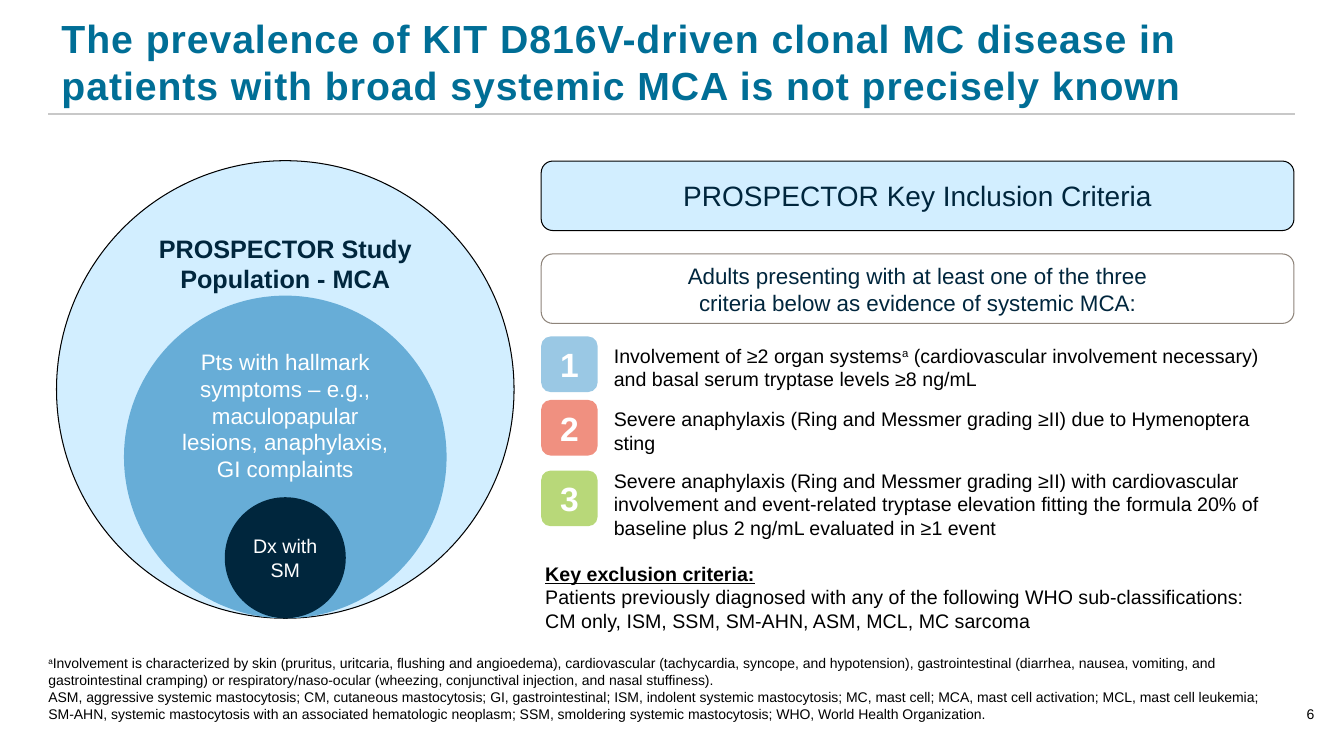
"""Build the slide on MCA study population and PROSPECTOR inclusion criteria."""
from lxml.etree import SubElement
from pptx import Presentation
from pptx.dml.color import RGBColor
from pptx.enum.shapes import MSO_CONNECTOR, MSO_SHAPE as Preset
from pptx.enum.text import MSO_ANCHOR as Anchor, PP_ALIGN as Align
from pptx.oxml.ns import qn
from pptx.util import Cm, Pt

COLORS = {
    "title": "006E96", "navy": "00263D", "pale": "D2EEFF", "sky": "67ADD7",
    "white": "FFFFFF", "black": "000000", "taupe": "8E847A", "rule": "C8C8C8",
    "one": "9AC8E4", "two": "F09080", "three": "B8D879",
}


def write(shape, paragraphs, size, color, bold=False, align=Align.LEFT,
          anchor=Anchor.TOP, inset=(0.25, 0.13)):
    """Fill a shape with paragraphs; text between carets is superscript."""
    frame = shape.text_frame
    frame.word_wrap = True
    frame.vertical_anchor = anchor
    frame.margin_left = frame.margin_right = Cm(inset[0])
    frame.margin_top = frame.margin_bottom = Cm(inset[1])
    for index, text in enumerate(paragraphs):
        paragraph = frame.add_paragraph() if index else frame.paragraphs[0]
        paragraph.alignment = align
        paragraph.font.name = "Arial"
        paragraph.font.size = Pt(size)
        paragraph.font.bold = bold
        paragraph.font.color.rgb = RGBColor.from_string(COLORS[color])
        if "^" not in text:
            paragraph.text = text
            continue
        for position, part in enumerate(text.split("^")):
            if part:
                run = paragraph.add_run()
                run.text = part
                if position % 2:
                    run._r.get_or_add_rPr().set("baseline", "30000")
    return frame.paragraphs


def draw(preset, left, top, width, height, fill=None, line=None):
    """Add a preset shape without shadow."""
    shape = slide.shapes.add_shape(preset, Cm(left), Cm(top), Cm(width), Cm(height))
    shape.shadow.inherit = False
    if fill:
        shape.fill.solid()
        shape.fill.fore_color.rgb = RGBColor.from_string(COLORS[fill])
    else:
        shape.fill.background()
    if line:
        shape.line.color.rgb = RGBColor.from_string(COLORS[line])
        shape.line.width = Pt(0.75)
    else:
        shape.line.fill.background()
    return shape


deck = Presentation()
deck.slide_width, deck.slide_height = Cm(33.87), Cm(19.05)
slide = deck.slides.add_slide(deck.slide_layouts[6])
textbox = slide.shapes.add_textbox

title_rule = slide.shapes.add_connector(
    MSO_CONNECTOR.STRAIGHT, Cm(1.22), Cm(2.87), Cm(32.64), Cm(2.87))
title_rule.line.color.rgb = RGBColor.from_string(COLORS["rule"])
title_rule.line.width = Pt(1)
SubElement(title_rule._element.spPr, qn("a:effectLst"))

title = textbox(Cm(1.22), Cm(0.84), Cm(31.4), Cm(2.08))
headline = write(
    title,
    ["The prevalence of KIT D816V-driven clonal MC disease in patients with "
     "broad systemic MCA is not precisely known"],
    28, "title", bold=True, anchor=Anchor.BOTTOM, inset=(0.33, 0.18))
headline[0].runs[0]._r.get_or_add_rPr().set("spc", "70")

page_number = textbox(Cm(32.39), Cm(17.17), Cm(1.27), Cm(1.02))
write(page_number, ["6"], 10, "black", align=Align.CENTER,
      anchor=Anchor.BOTTOM, inset=(0, 0))

CIRCLE_CENTER, CIRCLE_BOTTOM = 7.19, 15.58
populations = [
    (11.53, "pale", "black", "PROSPECTOR Study Population - MCA", 18, "navy", True, Anchor.TOP),
    (8.13, "sky", None,
     "Pts with hallmark symptoms – e.g., maculopapular lesions, anaphylaxis, GI complaints",
     16, "white", False, Anchor.TOP),
    (3.05, "navy", None, "Dx with SM", 14, "white", False, Anchor.MIDDLE),
]
for diameter, fill, line, label, size, color, bold, anchor in populations:
    circle = draw(Preset.OVAL, CIRCLE_CENTER - diameter / 2, CIRCLE_BOTTOM - diameter,
                  diameter, diameter, fill, line)
    write(circle, [label], size, color, bold, Align.CENTER, anchor, inset=(0.1, 0.13))

BANNER_LEFT = 13.64
banners = [
    (4.06, "pale", "black", "PROSPECTOR Key Inclusion Criteria", 20),
    (6.4, None, "taupe",
     "Adults presenting with at least one of the three\vcriteria below as evidence of systemic MCA:", 16),
]
for top, fill, line, label, size in banners:
    banner = draw(Preset.ROUNDED_RECTANGLE, BANNER_LEFT, top, 18.97, 1.75, fill, line)
    write(banner, [label], size, "navy", align=Align.CENTER, anchor=Anchor.MIDDLE)

criteria = [
    ("one", 8.48, 8.53,
     "Involvement of ≥2 organ systems^a^ (cardiovascular involvement necessary) "
     "and basal serum tryptase levels ≥8 ng/mL"),
    ("two", 10.08, 10.13,
     "Severe anaphylaxis (Ring and Messmer grading ≥II) due to Hymenoptera sting"),
    ("three", 11.86, 11.68,
     "Severe anaphylaxis (Ring and Messmer grading ≥II) with cardiovascular "
     "involvement and event-related tryptase elevation fitting the formula 20% of "
     "baseline plus 2 ng/mL evaluated in ≥1 event"),
]
for number, (fill, badge_top, text_top, criterion) in enumerate(criteria, 1):
    badge = draw(Preset.ROUNDED_RECTANGLE, BANNER_LEFT, badge_top, 1.42, 1.4, fill)
    write(badge, [str(number)], 24, "white", True, Align.CENTER, Anchor.MIDDLE)
    description = textbox(Cm(15.47), Cm(text_top), Cm(16.8), Cm(1.2))
    write(description, [criterion], 14, "black", inset=(0, 0.13))

exclusion = textbox(Cm(13.49), Cm(14.02), Cm(19.15), Cm(2.06))
exclusion_lines = write(
    exclusion,
    ["Key exclusion criteria:",
     "Patients previously diagnosed with any of the following WHO sub-classifications:\v"
     "CM only, ISM, SSM, SM-AHN, ASM, MCL, MC sarcoma"],
    14, "black")
exclusion_lines[0].font.bold = True
exclusion_lines[0].font.underline = True

footnote = textbox(Cm(1.22), Cm(16.79), Cm(31.14), Cm(1.4))
write(
    footnote,
    ["^a^Involvement is characterized by skin (pruritus, uritcaria, flushing and angioedema), "
     "cardiovascular (tachycardia, syncope, and hypotension), gastrointestinal (diarrhea, nausea, "
     "vomiting, and gastrointestinal cramping) or respiratory/naso-ocular (wheezing, conjunctival "
     "injection, and nasal stuffiness).",
     "ASM, aggressive systemic mastocytosis; CM, cutaneous mastocytosis; GI, gastrointestinal; "
     "ISM, indolent systemic mastocytosis; MC, mast cell; MCA, mast cell activation; MCL, mast cell "
     "leukemia; SM-AHN, systemic mastocytosis with an associated hematologic neoplasm; SSM, "
     "smoldering systemic mastocytosis; WHO, World Health Organization."],
    10, "black", anchor=Anchor.BOTTOM, inset=(0, 0))

deck.save("out.pptx")
